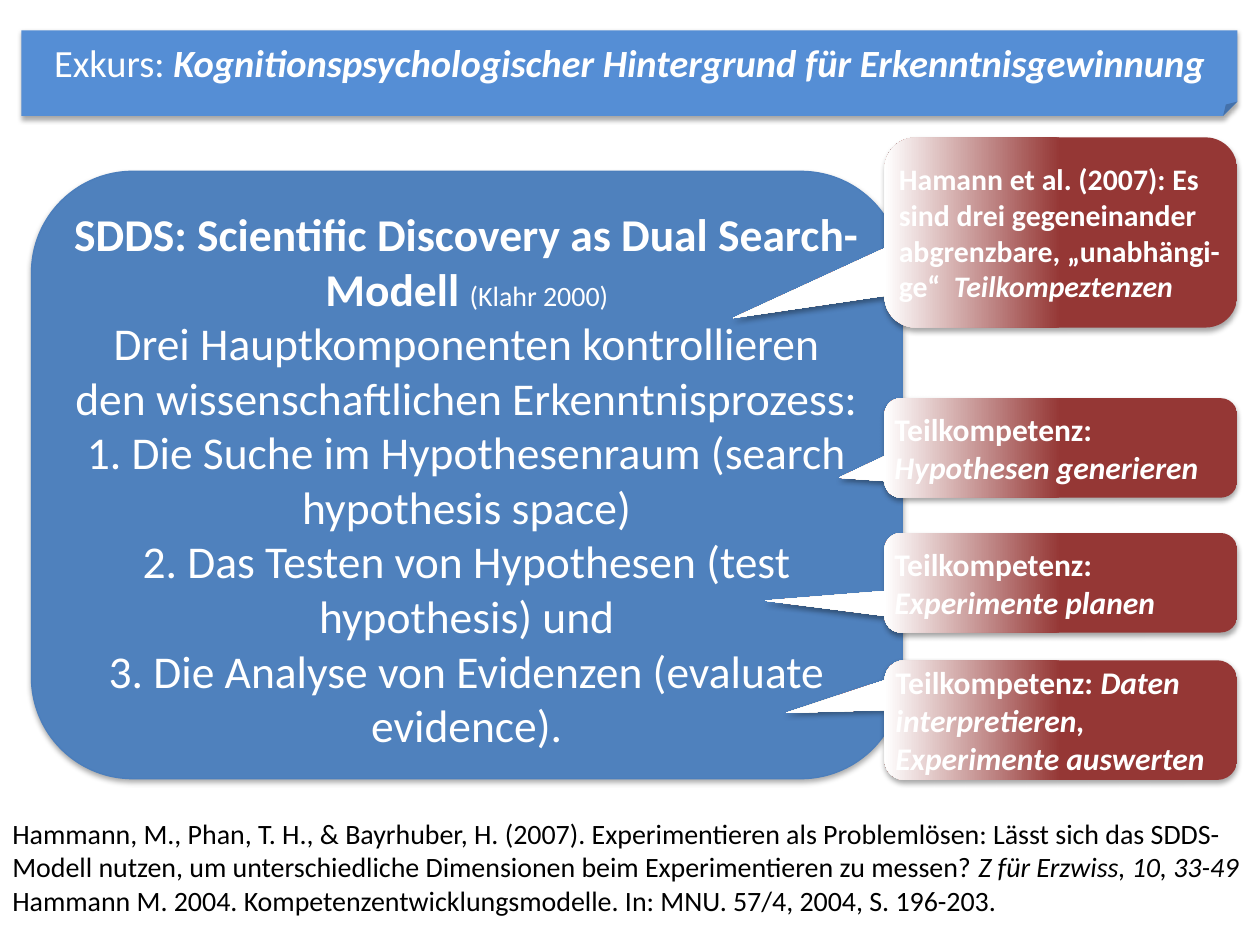
from lxml import etree
from pptx import Presentation
from pptx import util as u
from pptx.dml.color import RGBColor
from pptx.enum import shapes, text
from pptx.oxml.ns import qn

WHITE, BLACK, RED = "FFFFFF", "000000", "953735"
CALLOUT_LEFT, CALLOUT_WIDTH = 7.02, 2.8


def rgb(value):
    return RGBColor.from_string(value)


def add_shadow(shape):
    """Give the shape a soft shadow that falls straight down."""
    shape.shadow.inherit = False
    effects = shape._element.spPr.find(qn("a:effectLst"))
    shadow = etree.SubElement(
        effects, qn("a:outerShdw"), blurRad=str(u.Pt(3.1)), dist=str(u.Pt(1.8)),
        dir="5400000", rotWithShape="0")
    color = etree.SubElement(shadow, qn("a:srgbClr"), val=BLACK)
    etree.SubElement(color, qn("a:alpha"), val="35000")


def add_box(slide, kind, box, fill=None, line=None):
    shape = slide.shapes.add_shape(kind, *map(u.Inches, box))
    if fill:
        shape.fill.solid()
        shape.fill.fore_color.rgb = rgb(fill)
    if line:
        shape.line.color.rgb = rgb(line)
        shape.line.width = u.Pt(0.75)
    else:
        shape.line.fill.background()
    add_shadow(shape)
    return shape


def write(shape, paragraphs, size, color=WHITE, bold=None, align=text.PP_ALIGN.LEFT,
          anchor=text.MSO_ANCHOR.TOP, insets=(0.1, 0.05)):
    """Fill the shape; each paragraph is a list of (words, font settings)."""
    frame = shape.text_frame
    frame.word_wrap = True
    frame.vertical_anchor = anchor
    frame.margin_left = frame.margin_right = u.Inches(insets[0])
    frame.margin_top = frame.margin_bottom = u.Inches(insets[1])
    for index, runs in enumerate(paragraphs):
        paragraph = frame.paragraphs[0] if index == 0 else frame.add_paragraph()
        paragraph.alignment = align
        font = paragraph.font
        font.name, font.size, font.bold = "Calibri", u.Pt(size), bold
        font.color.rgb = rgb(color)
        for words, settings in runs:
            run = paragraph.add_run()
            run.text = words
            # Runs carry the full font, since some differ within a paragraph
            run.font.name = "Calibri"
            run.font.size = u.Pt(settings.get("size", size))
            run.font.bold = settings.get("bold", bold)
            run.font.italic = settings.get("italic")
            run.font.color.rgb = rgb(color)


def add_text(slide, box, paragraphs, size, **options):
    write(slide.shapes.add_textbox(*map(u.Inches, box)), paragraphs, size, **options)


def add_callout(slide, top, height, tip, lead, emphasis, size=18):
    """Add a callout that fades to white on the left, where its tip points."""
    shape = add_box(slide, shapes.MSO_SHAPE.ROUNDED_RECTANGULAR_CALLOUT,
                    (CALLOUT_LEFT, top, CALLOUT_WIDTH, height))
    shape.adjustments[0], shape.adjustments[1] = tip
    shape.fill.gradient()
    shape.fill.gradient_angle = 180
    for stop, position, color in zip(shape.fill.gradient_stops, (0.5, 1), (RED, WHITE)):
        stop.position = position
        stop.color.rgb = rgb(color)
    write(shape, [[(lead, {}), (emphasis, {"italic": True})]], size, bold=True,
          anchor=text.MSO_ANCHOR.MIDDLE, insets=(0.04, 0.04))


def main():
    presentation = Presentation()
    presentation.slide_width, presentation.slide_height = u.Inches(10), u.Inches(7.5)
    slide = presentation.slides.add_slide(presentation.slide_layouts[6])
    center = text.PP_ALIGN.CENTER

    # Model panel
    panel = add_box(slide, shapes.MSO_SHAPE.ROUNDED_RECTANGLE,
                    (0.25, 1.36, 6.91, 4.82), "4F81BD", "4B7EBC")
    statements = [
        "Drei Hauptkomponenten kontrollieren den wissenschaftlichen Erkenntnisprozess:",
        "1. Die Suche im Hypothesenraum (search hypothesis space)",
        "2. Das Testen von Hypothesen (test hypothesis) und",
        "3. Die Analyse von Evidenzen (evaluate evidence).",
    ]
    heading = [("SDDS: Scientific Discovery as Dual Search-Modell ", {"bold": True}),
               ("(Klahr 2000)", {"size": 16})]
    write(panel, [heading] + [[(words, {})] for words in statements], 26,
          bold=False, align=center, insets=(0.1, 0.04))

    # Title band
    add_box(slide, shapes.MSO_SHAPE.FOLDED_CORNER, (0.17, 0.24, 9.65, 0.68), "558ED5")
    add_text(slide, (0.17, 0.26, 9.65, 0.47), [[
        ("Exkurs: ", {}),
        ("Kognitionspsychologischer Hintergrund für Erkenntnisgewinnung",
         {"bold": True, "italic": True}),
    ]], 22, align=center)

    # References
    add_text(slide, (0, 6.43, 10, 0.91), [
        [("Hammann, M., Phan, T. H., & Bayrhuber, H. (2007). Experimentieren als "
          "Problemlösen: Lässt sich das SDDS-Modell nutzen, um unterschiedliche "
          "Dimensionen beim Experimentieren zu messen? ", {}),
         ("Z für Erzwiss, 10, 33-49", {"italic": True})],
        [("Hammann M. 2004. Kompetenzentwicklungsmodelle. In: MNU. 57/4, 2004, "
          "S. 196-203.", {})],
    ], 16, color=BLACK)

    # Callouts: one per component, then the general one
    for top, height, tip, skill in [
        (3.16, 0.79, (-0.63, 0.3), "Hypothesen generieren"),
        (4.23, 0.79, (-0.84, 0.18), "Experimente planen"),
        (5.24, 0.95, (-0.78, -0.06), "Daten interpretieren, Experimente auswerten"),
    ]:
        add_callout(slide, top, height, tip, "Teilkompetenz: ", skill)
    add_callout(slide, 1.09, 1.51, (-0.93, 0.45),
                "Hamann et al. (2007): Es sind drei gegeneinander abgrenzbare, "
                "„unabhängi-ge“  ", "Teilkompeztenzen", size=17)

    presentation.save("out.pptx")


if __name__ == "__main__":
    main()
